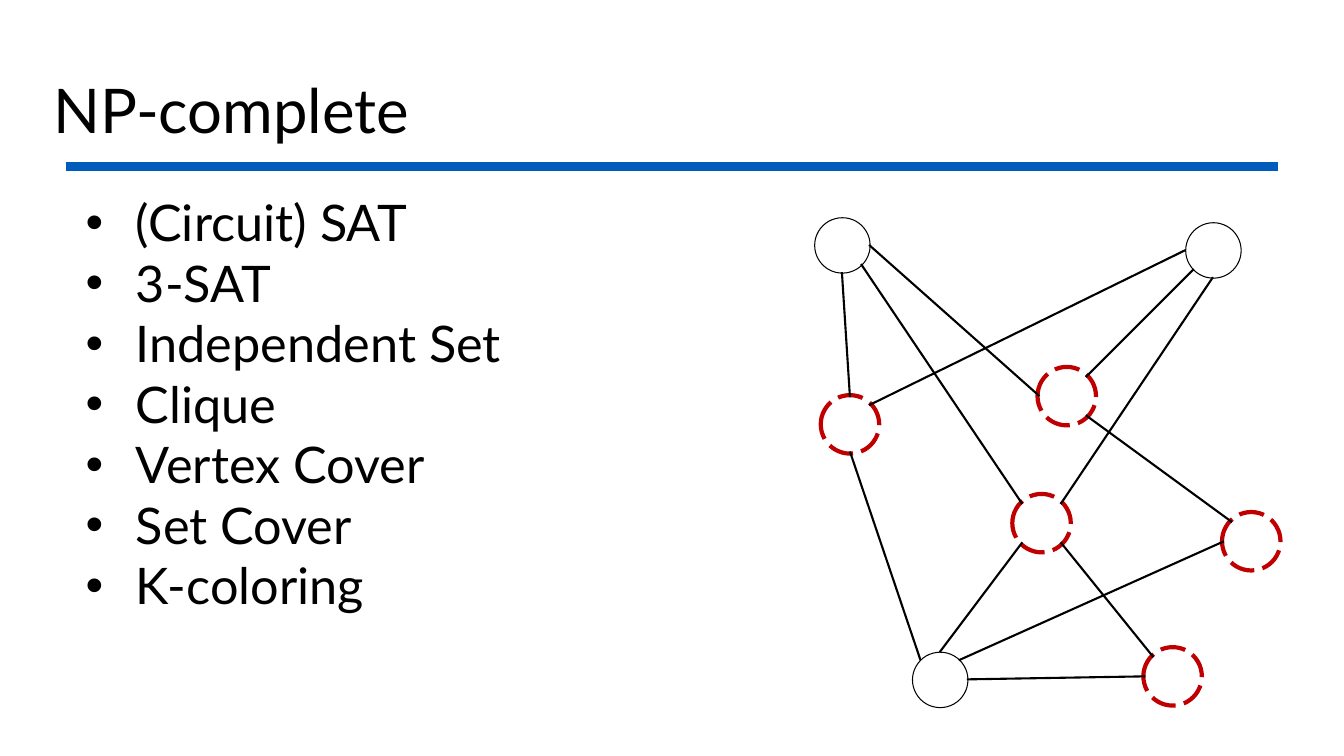
from lxml import etree
from pptx import Presentation
from pptx.dml.color import RGBColor
from pptx.enum.shapes import MSO_CONNECTOR, MSO_SHAPE
from pptx.enum.text import MSO_ANCHOR, MSO_AUTO_SIZE, PP_ALIGN
from pptx.oxml.ns import qn
from pptx.util import Pt

PX = 9144  # 100 px to the inch
BLACK, RED, BLUE, WHITE = "000000", "C00000", "005BBC", "FFFFFF"


def add_text(p, text, size):
    p.alignment = PP_ALIGN.LEFT
    r = p.add_run()
    r.text = text
    r.font.name, r.font.size = "Lato", Pt(size)
    r.font.color.rgb = RGBColor.from_string(BLACK)


def add_line(start, end, color, width):
    ends = [v * PX for v in (*start, *end)]
    c = s.shapes.add_connector(MSO_CONNECTOR.STRAIGHT, *ends)
    c.line.color.rgb = RGBColor.from_string(color)
    c.line.width = Pt(width)
    etree.SubElement(c._element.spPr, qn("a:effectLst"))


prs = Presentation()
prs.slide_width, prs.slide_height = 1333 * PX, 750 * PX
s = prs.slides.add_slide(prs.slide_layouts[5])

title = s.shapes.title
title.left, title.top, title.width, title.height = [v * PX for v in (43, 40, 1271, 145)]
tf = title.text_frame
tf.vertical_anchor = MSO_ANCHOR.MIDDLE
tf.paragraphs[0].line_spacing = 0.9
add_text(tf.paragraphs[0], "NP-complete", 44)
add_line((65, 165), (1268, 165), BLUE, 6)

problems = ["(Circuit) SAT", "3-SAT", "Independent Set", "Clique",
            "Vertex Cover", "Set Cover", "K-coloring"]
tf = s.shapes.add_textbox(*[v * PX for v in (75, 185, 723, 434)]).text_frame
tf.word_wrap = True
tf.auto_size = MSO_AUTO_SIZE.SHAPE_TO_FIT_TEXT
for i, problem in enumerate(problems):
    p = tf.add_paragraph() if i else tf.paragraphs[0]
    add_text(p, problem, 36)
    pPr = p._p.get_or_add_pPr()
    pPr.set("marL", str(50 * PX))
    pPr.set("indent", str(-50 * PX))
    etree.SubElement(pPr, qn("a:buFont"), typeface="Arial")
    etree.SubElement(pPr, qn("a:buChar"), char="•")

# Graph: node centres, with the vertex cover dashed in red
nodes = {"A": (835, 243), "B": (1058, 393), "C": (843, 421), "D": (1033, 519),
         "E": (932, 674), "F": (1163, 671), "G": (1241, 537), "H": (1203, 248)}
cover = "BCDFG"
for name, (x, y) in nodes.items():
    covered = name in cover
    d = 58 if covered else 55
    box = [v * PX for v in (x - d // 2, y - d // 2, d, d)]
    sp = s.shapes.add_shape(MSO_SHAPE.OVAL, *box)
    sp.shadow.inherit = False
    sp.fill.solid()
    sp.fill.fore_color.rgb = RGBColor.from_string(WHITE)
    sp.line.color.rgb = RGBColor.from_string(RED if covered else BLACK)
    sp.line.width = Pt(3 if covered else 0.75)
    if covered:
        dash = etree.SubElement(sp.line._get_or_add_ln(), qn("a:custDash"))
        etree.SubElement(dash, qn("a:ds"), d="600000", sp="200000")

# Offsets from a node's centre to the points where edges meet its rim
rim = {"t": (0, -27), "b": (0, 27), "l": (-27, 0), "r": (27, 0),
       "tl": (-19, -19), "tr": (19, -19), "bl": (-19, 19), "br": (19, 19)}
edges = ["A b C t", "A r B l", "A br D tl", "E t D bl", "E r F l", "F tl D br",
         "G l E tr", "B br G tl", "D tr H b", "C tr H l", "C b E tl", "B tr H bl"]
for edge in edges:
    a, a_side, b, b_side = edge.split()
    start, end = [[c + o for c, o in zip(nodes[n], rim[side])]
                  for n, side in ((a, a_side), (b, b_side))]
    add_line(start, end, BLACK, 1.5)

prs.save("out.pptx")
